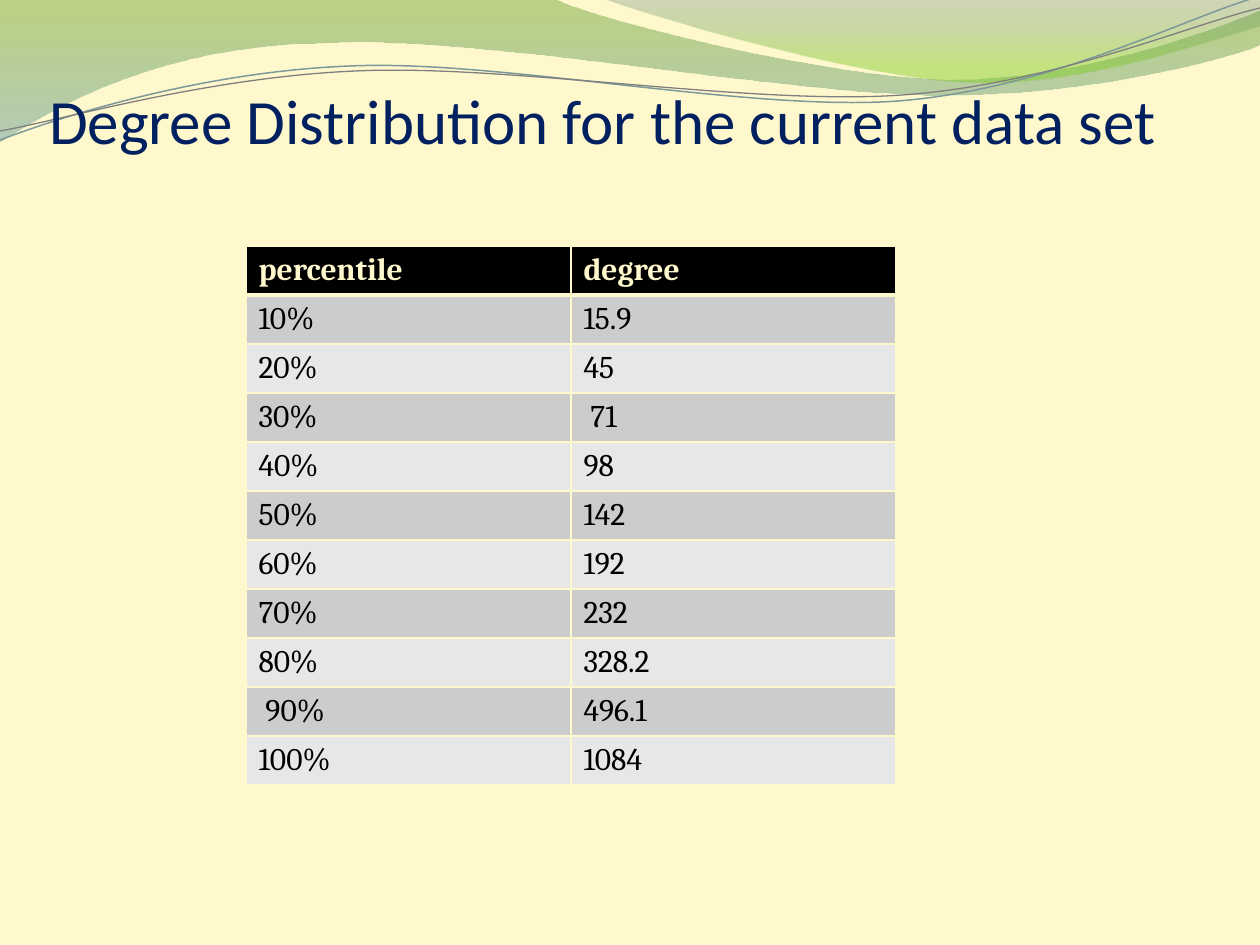
from lxml.etree import SubElement
from pptx import Presentation
from pptx.dml.color import RGBColor
from pptx.enum.text import MSO_ANCHOR, PP_ALIGN
from pptx.oxml.ns import qn
from pptx.util import Pt

PX_PER_INCH = 126
CREAM = "FFF8CD"
HEADER = ("percentile", "degree")
DEGREES = [
    ("10%", "15.9"), ("20%", "45"), ("30%", " 71"), ("40%", "98"), ("50%", "142"),
    ("60%", "192"), ("70%", "232"), ("80%", "328.2"), (" 90%", "496.1"), ("100%", "1084"),
]

# Outlines: a start point, then segments of one point (straight) or three (cubic curve).
BROAD_WAVE = [
    (0, 0), [(554, -1)],
    [(600, 21), (837, 79), (955, 79)], [(1075, 79), (1207, 33), (1260, 11)],
    [(1261, 45)],
    [(1239, 55), (1096, 96), (940, 95)], [(784, 95), (481, 35), (324, 43)],
    [(163, 45), (58, 105), (-1, 142)],
]
RIGHT_WAVE = [
    (604, -1), [(641, 14), (859, 78), (969, 82)],
    [(1079, 87), (1211, 40), (1260, 26)], [(1260, 0)],
]
UPPER_LINE = [
    (0, 140), [(60, 117), (199, 72), (349, 66)],
    [(498, 59), (747, 112), (898, 101)], [(1050, 89), (1182, 19), (1257, -3)],
]
LOWER_LINE = [
    (0, 131), [(59, 121), (207, 77), (357, 71)],
    [(508, 64), (752, 106), (903, 95)], [(1053, 84), (1186, 26), (1260, 8)],
]


def px(length):
    return round(length * 914400 / PX_PER_INCH)


def color(value):
    return RGBColor.from_string(value)


def write(frame, text, font, size, fill, bold=False):
    paragraph = frame.paragraphs[0]
    paragraph.alignment = PP_ALIGN.LEFT
    run = paragraph.add_run()
    run.text = text
    run.font.name = font
    run.font.size = Pt(size)
    run.font.bold = bold
    run.font.color.rgb = color(fill)


def add_outline(slide, left, top, outline, closed):
    """Build a freeform through the anchor points, then bend its curved segments."""
    start, *segments = outline
    anchors = [(px(left + x), px(top + y)) for x, y in [start, *(s[-1] for s in segments)]]
    builder = slide.shapes.build_freeform(*anchors[0])
    builder.add_line_segments(anchors[1:], close=closed)
    shape = builder.convert_to_shape()
    shape.shadow.inherit = False
    steps = list(shape.element.iter(qn("a:lnTo")))
    for step, segment in zip(steps, segments):
        if len(segment) == 3:
            step.tag = qn("a:cubicBezTo")
            step.remove(step[0])
            for x, y in segment:
                SubElement(step, qn("a:pt"), x=str(px(left + x) - shape.left),
                           y=str(px(top + y) - shape.top))
    return shape


def add_wave(slide, left, top, outline, stops):
    """Fill an outline from top to bottom; stops are (position, colour, opacity %)."""
    shape = add_outline(slide, left, top, outline, closed=True)
    shape.line.fill.background()
    shape.fill.gradient()
    shape.fill.gradient_angle = 270
    elements = shape.element.iter(qn("a:gs"))
    for stop, element, (position, value, opacity) in zip(
            shape.fill.gradient_stops, elements, stops):
        stop.position = position
        stop.color.rgb = color(value)
        SubElement(element[0], qn("a:alpha"), val=str(opacity * 1000))


def add_wave_line(slide, left, top, outline, value, width):
    shape = add_outline(slide, left, top, outline, closed=False)
    shape.fill.background()
    shape.line.color.rgb = color(value)
    shape.line.width = Pt(width)


def add_wave_banner(slide, left, top):
    add_wave(slide, left, top, BROAD_WAVE, [(0, "69A22A", 45), (1, "77A5A6", 55)])
    add_wave(slide, left, top, RIGHT_WAVE, [(0, "648484", 30), (0.8, "7ECD26", 45)])
    add_wave_line(slide, left, top, UPPER_LINE, "7C999A", 0.85)
    add_wave_line(slide, left, top, LOWER_LINE, "7F7F7F", 0.75)


def place_title(slide, left, top, width, height):
    title = slide.shapes.title
    title.left, title.top, title.width, title.height = map(px, (left, top, width, height))
    frame = title.text_frame
    frame.word_wrap = True
    frame.vertical_anchor = MSO_ANCHOR.BOTTOM
    frame.margin_left = frame.margin_right = frame.margin_bottom = 0
    frame.margin_top = px(6)
    write(frame, "Degree Distribution for the current data set",
          font="Calibri", size=36, fill="002060")
    title.element.getparent().append(title.element)  # in front of the waves


def set_borders(cell, **widths):
    properties = cell._tc.get_or_add_tcPr()
    for side, width in widths.items():
        line = SubElement(properties, qn(f"a:ln{side}"), w=str(Pt(width)))
        SubElement(SubElement(line, qn("a:solidFill")), qn("a:srgbClr"), val=CREAM)


def add_degree_table(slide, left, top, width, height):
    rows = [HEADER, *DEGREES]
    frame = slide.shapes.add_table(len(rows), len(HEADER), *map(px, (left, top, width, height)))
    table = frame.table
    for row_index, row in enumerate(rows):
        is_header = row_index == 0
        fill = "000000" if is_header else ("E7E7E7", "CCCCCC")[row_index % 2]
        for column_index, text in enumerate(row):
            cell = table.cell(row_index, column_index)
            set_borders(cell, L=1, R=1, T=3 if row_index == 1 else 1, B=3 if is_header else 1)
            cell.fill.solid()
            cell.fill.fore_color.rgb = color(fill)
            write(cell.text_frame, text, font="Cambria", size=18,
                  fill=CREAM if is_header else "000000", bold=is_header)


def main():
    presentation = Presentation()
    presentation.slide_width, presentation.slide_height = px(1260), px(945)
    slide = presentation.slides.add_slide(presentation.slide_layouts.get_by_name("Title Only"))
    slide.background.fill.solid()
    slide.background.fill.fore_color.rgb = color(CREAM)
    add_wave_banner(slide, 0, 0)
    place_title(slide, 49, 0, 1134, 157)
    add_degree_table(slide, 246, 246, 650, 539)
    presentation.save("out.pptx")


if __name__ == "__main__":
    main()
